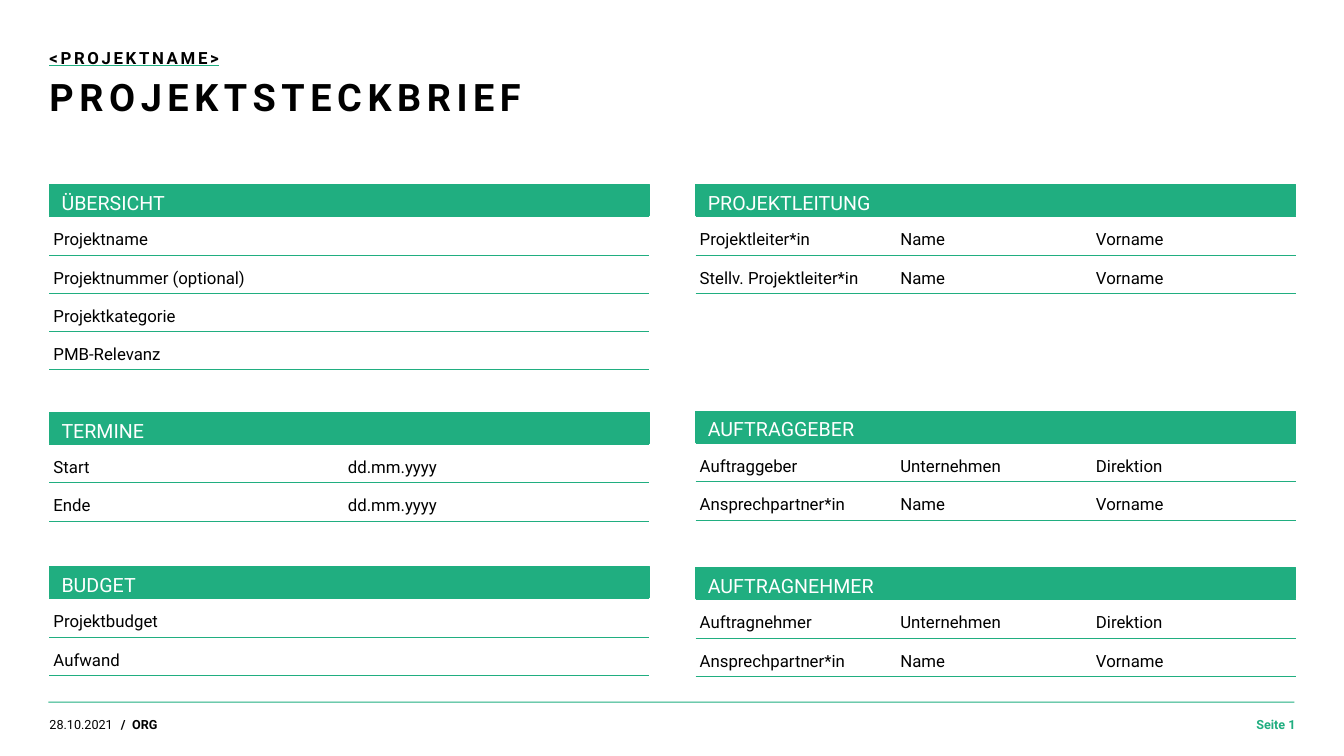
from lxml.etree import SubElement
from pptx import Presentation
from pptx.dml.color import RGBColor
from pptx.enum.shapes import MSO_SHAPE
from pptx.enum.text import MSO_ANCHOR, MSO_AUTO_SIZE, PP_ALIGN
from pptx.oxml import parse_xml
from pptx.oxml.ns import nsdecls, qn
from pptx.util import Inches, Pt

GREEN, BLACK, WHITE = "20AE80", "000000", "FFFFFF"
LEFT, RIGHT, WIDTH = 0.49, 6.9, 5.95
BAR_HEIGHT, TABLE_OFFSET, ROW_HEIGHT = 0.31, 0.32, 0.38
TWO_COLUMNS = (2.96, 2.99)
THREE_COLUMNS = (2.03, 1.94, 1.98)

SECTIONS = [
    (LEFT, 1.83, "ÜBERSICHT", TWO_COLUMNS,
     [("Projektname", ""), ("Projektnummer (optional)", ""),
      ("Projektkategorie", ""), ("PMB-Relevanz", "")]),
    (LEFT, 4.09, "TERMINE", TWO_COLUMNS,
     [("Start", "dd.mm.yyyy"), ("Ende", "dd.mm.yyyy")]),
    (LEFT, 5.62, "BUDGET", TWO_COLUMNS,
     [("Projektbudget", ""), ("Aufwand", "")]),
    (RIGHT, 1.83, "PROJEKTLEITUNG", THREE_COLUMNS,
     [("Projektleiter*in", "Name", "Vorname"),
      ("Stellv. Projektleiter*in", "Name", "Vorname")]),
    (RIGHT, 4.08, "AUFTRAGGEBER", THREE_COLUMNS,
     [("Auftraggeber", "Unternehmen", "Direktion"),
      ("Ansprechpartner*in", "Name", "Vorname")]),
    (RIGHT, 5.63, "AUFTRAGNEHMER", THREE_COLUMNS,
     [("Auftragnehmer", "Unternehmen", "Direktion"),
      ("Ansprechpartner*in", "Name", "Vorname")]),
]


def rgb(value):
    return RGBColor.from_string(value)


class Sheet:
    """Style of the project sheet and the slide it is drawn on."""

    font_name = "Roboto"

    def __init__(self, slide):
        self.slide = slide

    def set_text(self, frame, text, size, color=BLACK, bold=False, leading=None,
                 align=PP_ALIGN.LEFT, tracking=None, tab=None):
        paragraph = frame.paragraphs[0]
        paragraph.text = text
        paragraph.alignment = align
        if leading:
            paragraph.line_spacing = Pt(leading)
        if tab:
            tabs = SubElement(paragraph._p.get_or_add_pPr(), qn("a:tabLst"))
            SubElement(tabs, qn("a:tab"), pos=str(Inches(tab)), algn="l")
        font = paragraph.font
        font.size, font.bold = Pt(size), bold
        font.color.rgb = rgb(color)
        font.name = self.font_name
        if tracking:
            font._element.set("spc", str(round(tracking * 100)))
        return font

    def set_frame(self, frame, anchor, horizontal=0, vertical=0):
        frame.word_wrap = True
        frame.auto_size = MSO_AUTO_SIZE.NONE
        frame.vertical_anchor = anchor
        frame.margin_left = frame.margin_right = Inches(horizontal)
        frame.margin_top = frame.margin_bottom = Inches(vertical)

    def title(self, text, left, top, width, height):
        title = self.slide.shapes.title
        title.left, title.top = Inches(left), Inches(top)
        title.width, title.height = Inches(width), Inches(height)
        self.set_frame(title.text_frame, MSO_ANCHOR.TOP)
        self.set_text(title.text_frame, text, 27, bold=True, leading=29, tracking=4)

    def text(self, text, left, top, width, height, size,
             anchor=MSO_ANCHOR.MIDDLE, **style):
        box = self.slide.shapes.add_textbox(
            Inches(left), Inches(top), Inches(width), Inches(height))
        self.set_frame(box.text_frame, anchor)
        return self.set_text(box.text_frame, text, size, **style)

    def underline(self, font, color):
        font.underline = True
        fill = parse_xml(
            f'<a:uFill {nsdecls("a")}><a:solidFill><a:srgbClr val="{color}"/>'
            '</a:solidFill></a:uFill>')
        font._element.find(qn("a:latin")).addprevious(fill)

    def bar(self, left, top, width, height):
        bar = self.slide.shapes.add_shape(
            MSO_SHAPE.RECTANGLE, Inches(left), Inches(top),
            Inches(width), Inches(height))
        bar.shadow.inherit = False
        bar.fill.solid()
        bar.fill.fore_color.rgb = rgb(GREEN)
        bar.line.fill.background()
        return bar

    def heading(self, text, left, top):
        bar = self.bar(left, top, WIDTH, BAR_HEIGHT)
        bar.line.color.rgb = rgb(GREEN)
        bar.line.width = Pt(1)
        self.set_frame(bar.text_frame, MSO_ANCHOR.MIDDLE, 0.12, 0.08)
        self.set_text(bar.text_frame, text, 14, WHITE, leading=20)

    def rule_cell(self, cell):
        """Green rules above and below, none at the sides, no fill."""
        cell.fill.background()
        properties = cell._tc.get_or_add_tcPr()
        green = f'<a:solidFill><a:srgbClr val="{GREEN}"/></a:solidFill>'
        for index, side in enumerate("LRTB"):
            paint = green if side in "TB" else "<a:noFill/>"
            properties.insert(index, parse_xml(
                f'<a:ln{side} {nsdecls("a")} w="{Pt(0.75)}">{paint}</a:ln{side}>'))

    def table(self, rows, left, top, columns):
        table = self.slide.shapes.add_table(
            len(rows), len(columns), Inches(left), Inches(top),
            Inches(sum(columns)), Inches(ROW_HEIGHT * len(rows))).table
        table.first_row = table.horz_banding = False
        for column, width in zip(table.columns, columns):
            column.width = Inches(width)
        for row, entries in zip(table.rows, rows):
            row.height = Inches(ROW_HEIGHT)
            for index, (cell, entry) in enumerate(zip(row.cells, entries)):
                cell.margin_left = Inches(0 if index else 0.04)
                cell.margin_right = 0
                cell.margin_top = cell.margin_bottom = Inches(0.05)
                cell.vertical_anchor = MSO_ANCHOR.MIDDLE
                self.set_text(cell.text_frame, entry, 12, leading=20)
                self.rule_cell(cell)


def main():
    presentation = Presentation()
    presentation.slide_width = Inches(13.33)
    presentation.slide_height = Inches(7.5)
    sheet = Sheet(presentation.slides.add_slide(presentation.slide_layouts[5]))

    sheet.bar(0.48, 6.96, 12.36, 0.01)
    sheet.title("PROJEKTSTECKBRIEF", LEFT, 0.78, 11.06, 0.41)
    project_name = sheet.text("<PROJEKTNAME>", LEFT, 0.47, 11.06, 0.2, 12,
                              anchor=MSO_ANCHOR.TOP, bold=True, tracking=1.9)
    sheet.underline(project_name, GREEN)

    for left, top, heading, columns, rows in SECTIONS:
        sheet.table(rows, left, top + TABLE_OFFSET, columns)
        sheet.heading(heading, left, top)

    sheet.text("28.10.2021", LEFT, 7.11, 0.71, 0.15, 9)
    sheet.text("/\tORG", 1.2, 7.11, 10.82, 0.15, 9, bold=True, tab=0.11)
    sheet.text("Seite 1", 12.16, 7.11, 0.69, 0.15, 9, color=GREEN, bold=True,
               align=PP_ALIGN.RIGHT)
    presentation.save("out.pptx")


if __name__ == "__main__":
    main()
